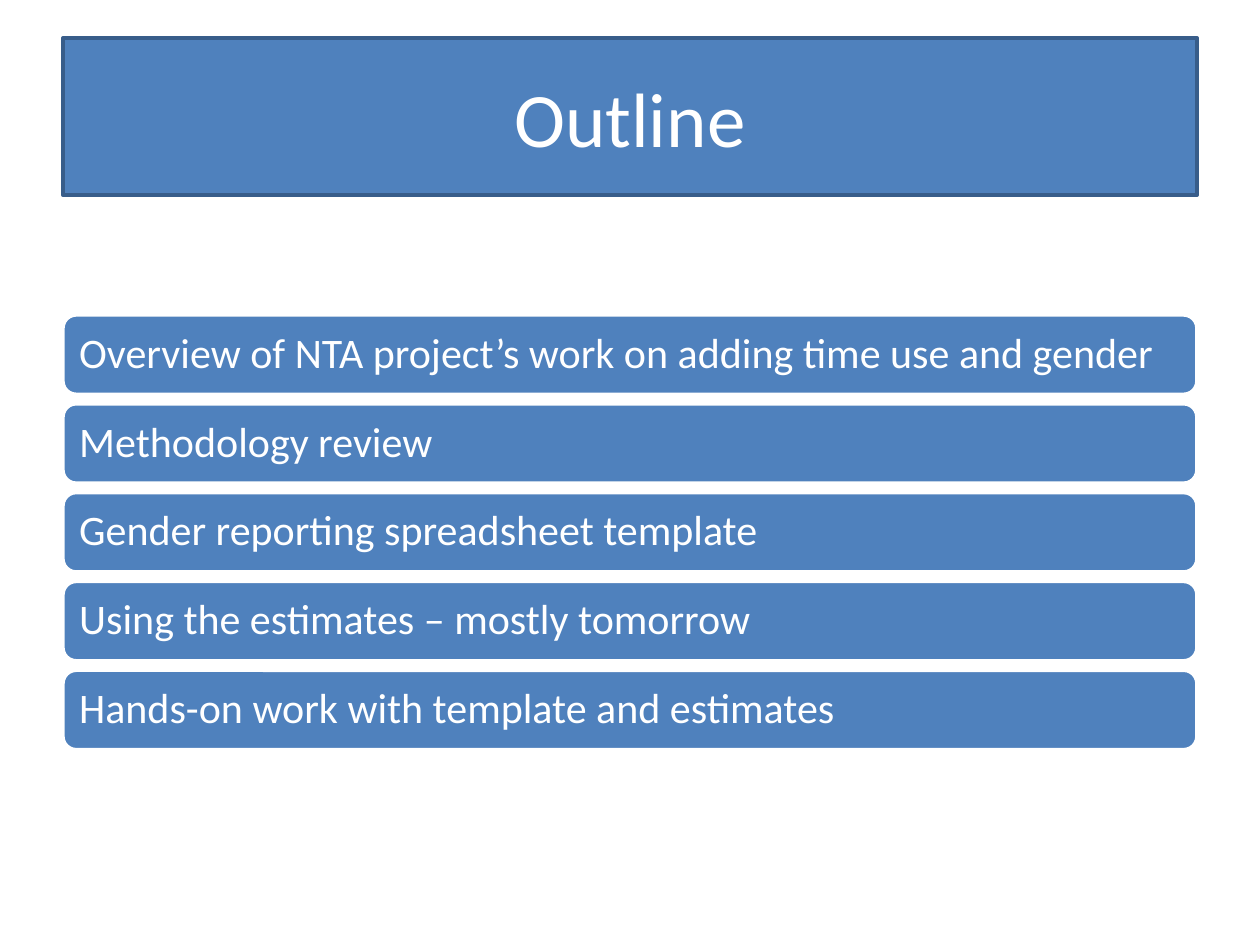
import pptx
import pptx.util
from pptx.dml.color import RGBColor
from pptx.enum.shapes import MSO_SHAPE
from pptx.enum.text import MSO_ANCHOR, PP_ALIGN
from pptx.util import Inches, Pt

BLUE = RGBColor(0x4F, 0x81, 0xBD)
DARK_BLUE = RGBColor(0x38, 0x5D, 0x8A)
WHITE = RGBColor(0xFF, 0xFF, 0xFF)

LEFT, WIDTH = 0.5, 9
FIRST_TOP, ITEM_HEIGHT, ITEM_PITCH = 2.5, 0.63, 0.705
TOPICS = [
    "Overview of NTA project’s work on adding time use and gender",
    "Methodology review",
    "Gender reporting spreadsheet template",
    "Using the estimates – mostly tomorrow",
    "Hands-on work with template and estimates",
]

deck = pptx.Presentation()
deck.slide_width, deck.slide_height = Inches(10), Inches(7.5)
page = deck.slides.add_slide(deck.slide_layouts[6])


def add_bar(preset, top, height, outline, text, size, align):
    """Add a full-width blue bar with one line of white text; return it."""
    bar = page.shapes.add_shape(
        preset, Inches(LEFT), Inches(top), Inches(WIDTH), Inches(height))
    bar.shadow.inherit = False
    bar.fill.solid()
    bar.fill.fore_color.rgb = BLUE
    bar.line.color.rgb = outline
    bar.line.width = Pt(2)
    frame = bar.text_frame
    frame.word_wrap = True
    frame.vertical_anchor = MSO_ANCHOR.MIDDLE
    para = frame.paragraphs[0]
    para.alignment = align
    span = para.add_run()
    span.text = text
    span.font.name = "Calibri"
    span.font.size = Pt(size)
    span.font.color.rgb = WHITE
    return bar


add_bar(MSO_SHAPE.RECTANGLE, 0.3, 1.25, DARK_BLUE, "Outline", 44, PP_ALIGN.CENTER)

for index, topic in enumerate(TOPICS):
    bar = add_bar(MSO_SHAPE.ROUNDED_RECTANGLE, FIRST_TOP + index * ITEM_PITCH,
                  ITEM_HEIGHT, WHITE, topic, 24, PP_ALIGN.LEFT)
    frame = bar.text_frame
    frame.margin_left = frame.margin_right = Inches(0.1)
    frame.margin_top = frame.margin_bottom = Inches(0.1)
    frame.paragraphs[0].line_spacing = 0.9

deck.save("out.pptx")
